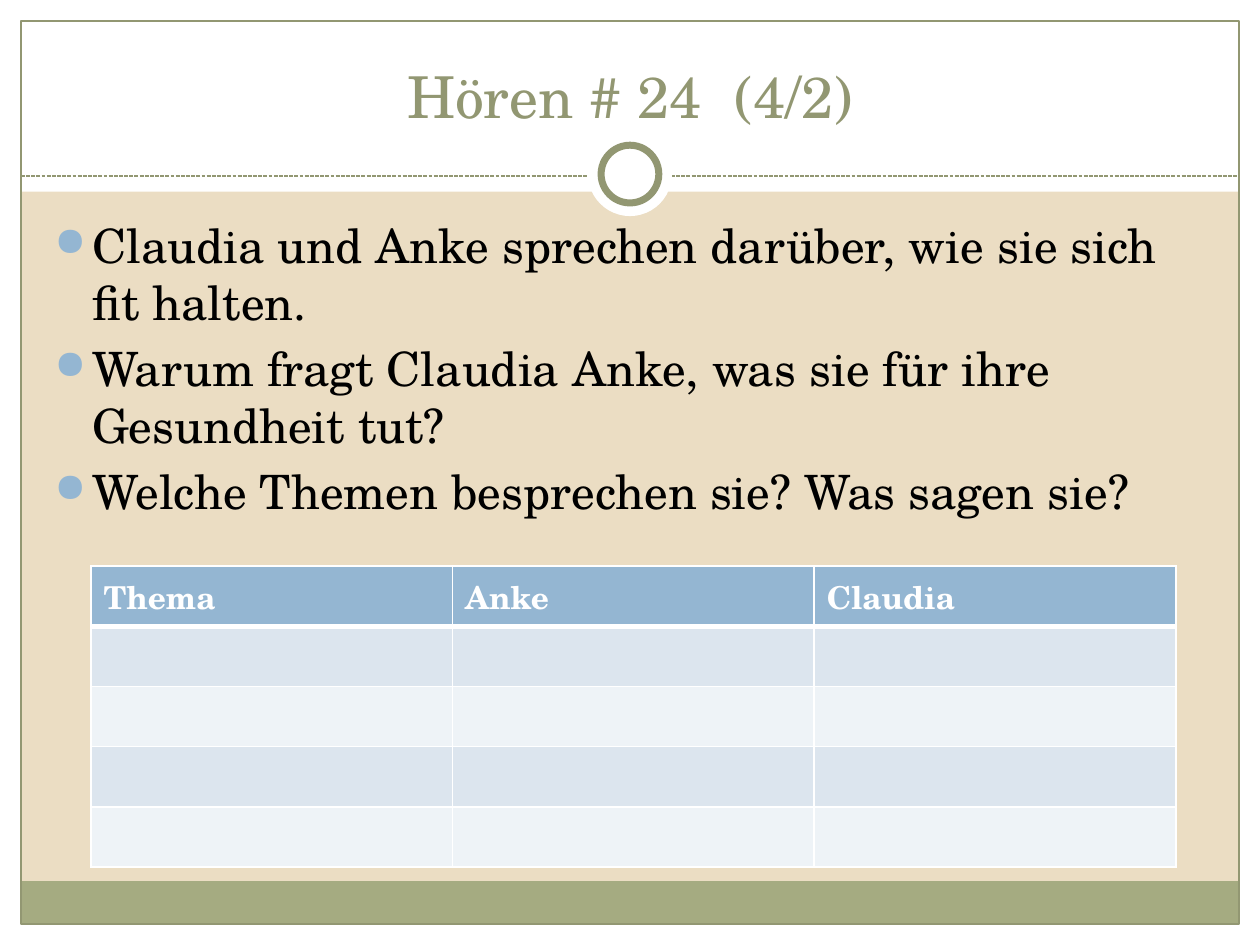
from dataclasses import dataclass

from lxml import etree
from pptx import Presentation
from pptx import util as u
from pptx.dml.color import RGBColor
from pptx.enum import dml, shapes, text
from pptx.oxml import ns

Pt = u.Pt


@dataclass(frozen=True)
class Theme:
    font: str = "TeX Gyre Schola"
    sand: str = "EBDDC3"
    white: str = "FFFFFF"
    olive: str = "929772"
    sage: str = "A5AB81"
    blue: str = "94B6D2"
    black: str = "000000"
    bands: tuple = ("DCE5EE", "EEF3F7")
    title_size: float = 33
    body_size: float = 27
    table_size: float = 18


THEME = Theme()
WIDTH, HEIGHT, MARGIN = 720, 540, 12
QUESTIONS = (
    "Claudia und Anke sprechen darüber, wie sie sich fit halten.",
    "Warum fragt Claudia Anke, was sie für ihre Gesundheit tut?",
    "Welche Themen besprechen sie? Was sagen sie?",
)
HEADINGS = ("Thema", "Anke", "Claudia")
EMPTY_ROWS = 4


def color(value):
    return RGBColor.from_string(value)


def apply_format(target, values):
    for name, value in values.items():
        setattr(target, name, value)


def set_fill(fill, value):
    fill.solid()
    fill.fore_color.rgb = color(value)


def add_shape(slide, kind, box, fill=None, line=None, width=0.75):
    shape = slide.shapes.add_shape(kind, *map(Pt, box))
    shape.shadow.inherit = False
    if fill:
        set_fill(shape.fill, fill)
    else:
        shape.fill.background()
    if line:
        shape.line.color.rgb = color(line)
        shape.line.width = Pt(width)
    else:
        shape.line.fill.background()


def add_dashed_line(slide, left, right, y):
    line = slide.shapes.add_connector(
        shapes.MSO_CONNECTOR.STRAIGHT, Pt(left), Pt(y), Pt(right), Pt(y))
    line.line.color.rgb = color(THEME.olive)
    apply_format(line.line, {
        "width": Pt(0.75), "dash_style": dml.MSO_LINE.SQUARE_DOT})
    properties = line._element.spPr
    etree.SubElement(properties, ns.qn("a:effectLst"))


def write(paragraph, words, size, value, bold=False):
    run = paragraph.add_run()
    run.text = words
    apply_format(run.font, {"name": THEME.font, "size": Pt(size), "bold": bold})
    run.font.color.rgb = color(value)


def add_text_frame(slide, box, anchor):
    frame = slide.shapes.add_textbox(*map(Pt, box)).text_frame
    apply_format(frame, {"word_wrap": True, "vertical_anchor": anchor})
    return frame


def add_bullet(paragraph, indent):
    properties = paragraph._p.get_or_add_pPr()
    properties.set("marL", str(Pt(indent)))
    properties.set("indent", str(-Pt(indent)))
    bullet_color = etree.SubElement(properties, ns.qn("a:buClr"))
    etree.SubElement(bullet_color, ns.qn("a:srgbClr"), val=THEME.blue)
    etree.SubElement(properties, ns.qn("a:buSzPct"), val="85000")
    etree.SubElement(properties, ns.qn("a:buChar"), char="●")


def add_title(slide, words):
    frame = add_text_frame(slide, (24, 18, 672, 60), text.MSO_ANCHOR.BOTTOM)
    paragraph = frame.paragraphs[0]
    paragraph.alignment = text.PP_ALIGN.CENTER
    write(paragraph, words, THEME.title_size, THEME.olive)


def add_questions(slide):
    frame = add_text_frame(slide, (24, 120, 670, 360), text.MSO_ANCHOR.TOP)
    for index, question in enumerate(QUESTIONS):
        paragraph = frame.add_paragraph() if index else frame.paragraphs[0]
        paragraph.space_before = Pt(0.2 * THEME.body_size)
        add_bullet(paragraph, 21.6)
        write(paragraph, question, THEME.body_size, THEME.black)


def set_borders(cell, widths):
    properties = cell._tc.get_or_add_tcPr()
    for position, (side, width) in enumerate(widths.items()):
        border = etree.Element(ns.qn(f"a:ln{side}"), w=str(Pt(width)))
        fill = etree.SubElement(border, ns.qn("a:solidFill"))
        etree.SubElement(fill, ns.qn("a:srgbClr"), val=THEME.white)
        properties.insert(position, border)


def add_answer_table(slide):
    row_count = EMPTY_ROWS + 1
    table = slide.shapes.add_table(
        row_count, len(HEADINGS), Pt(52), Pt(323.5), Pt(620), Pt(172)).table
    for row_index, row in enumerate(table.rows):
        row.height = Pt(172 / row_count)
        for cell in row.cells:
            fill = THEME.bands[(row_index - 1) % 2] if row_index else THEME.blue
            set_fill(cell.fill, fill)
            set_borders(cell, {
                "L": 1, "R": 1,
                "T": 3 if row_index == 1 else 1,
                "B": 1 if row_index else 3})
    for cell, heading in zip(table.rows[0].cells, HEADINGS):
        write(cell.text_frame.paragraphs[0], heading,
              THEME.table_size, THEME.white, bold=True)


def add_frame(slide):
    rectangle = shapes.MSO_SHAPE.RECTANGLE
    inner_width = WIDTH - 2 * MARGIN
    bottom = HEIGHT - MARGIN
    for box in ((0, bottom, WIDTH, MARGIN), (0, 0, WIDTH, 109.5),
                (0, 0, MARGIN, HEIGHT), (WIDTH - MARGIN, 0, MARGIN, HEIGHT)):
        add_shape(slide, rectangle, box, THEME.white)
    add_shape(slide, rectangle, (MARGIN, 503.5, inner_width, 24.5), THEME.sage)
    add_shape(slide, rectangle, (MARGIN, MARGIN, inner_width, bottom - MARGIN),
              line=THEME.olive)
    add_dashed_line(slide, MARGIN, WIDTH - MARGIN, 100.6)


def add_ring(slide):
    center_x, center_y = WIDTH / 2, 99.5
    for diameter, line in ((48, None), (33, THEME.olive)):
        box = (center_x - diameter / 2, center_y - diameter / 2, diameter, diameter)
        add_shape(slide, shapes.MSO_SHAPE.OVAL, box, THEME.white, line, 4)


def main():
    presentation = Presentation()
    apply_format(presentation, {"slide_width": Pt(WIDTH), "slide_height": Pt(HEIGHT)})
    slide = presentation.slides.add_slide(presentation.slide_layouts[6])
    set_fill(slide.background.fill, THEME.sand)
    add_frame(slide)
    add_ring(slide)
    add_title(slide, "Hören # 24  (4/2)")
    add_questions(slide)
    add_answer_table(slide)
    presentation.save("out.pptx")


if __name__ == "__main__":
    main()
